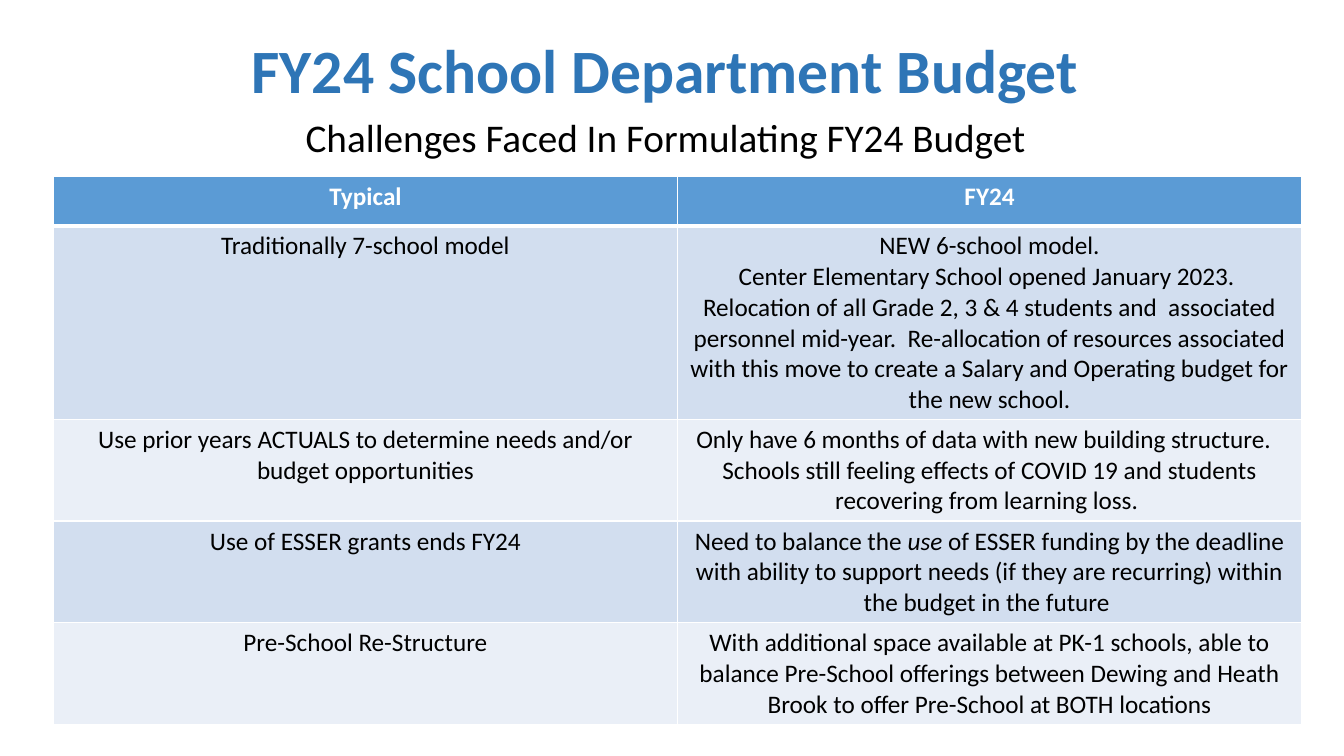
from lxml.etree import SubElement
from pptx import Presentation
from pptx.dml.color import RGBColor
from pptx.enum.text import MSO_ANCHOR, PP_ALIGN
from pptx.oxml.ns import qn
from pptx.util import Inches, Pt

COLORS = {"title": "2E75B6", "text": "000000", "header": "5B9BD5",
          "odd": "D2DEEF", "even": "EAEFF7", "white": "FFFFFF"}

TITLE = {"size": Pt(44), "bold": True}
SUBTITLE = {"size": Pt(28), "bold": False}
HEADER = {"size": Pt(18), "bold": True}
BODY = {"size": Pt(18), "bold": False}

ROWS = [
    (["Typical"], ["FY24"]),
    (["Traditionally 7-school model"],
     ["NEW 6-school model.",
      "Center Elementary School opened January 2023.  Relocation of all Grade 2, 3 & 4 "
      "students and  associated personnel mid-year.  Re-allocation of resources associated "
      "with this move to create a Salary and Operating budget for the new school."]),
    (["Use prior years ACTUALS to determine needs and/or budget opportunities"],
     ["Only have 6 months of data with new building structure.  ",
      "Schools still feeling effects of COVID 19 and students recovering from learning loss. "]),
    (["Use of ESSER grants ends FY24"],
     ["Need to balance the *use* of ESSER funding by the deadline with ability to support "
      "needs (if they are recurring) within the budget in the future "]),
    (["Pre-School Re-Structure"],
     ["With additional space available at PK-1 schools, able to balance Pre-School offerings "
      "between Dewing and Heath Brook to offer Pre-School at BOTH locations"]),
]
ROW_HEIGHTS = [0.49, 1.92, 1.01, 1.01, 1.01]


def write(tf, paragraphs, color, font, **spacing):
    for i, text in enumerate(paragraphs):
        p = tf.add_paragraph() if i else tf.paragraphs[0]
        p.alignment = PP_ALIGN.CENTER
        for name, value in spacing.items():
            setattr(p, name, value)
        for j, part in enumerate(text.split("*")):
            r = p.add_run()
            r.text = part
            for name, value in {"name": "Calibri", **font}.items():
                setattr(r.font, name, value)
            if j % 2:
                r.font.italic = True
            r.font.color.rgb = RGBColor.from_string(COLORS[color])


def add_heading(s, box, text, color, font, anchor, **spacing):
    tf = s.shapes.add_textbox(*map(Inches, box)).text_frame
    tf.word_wrap = True
    tf.vertical_anchor = anchor
    write(tf, [text], color, font, line_spacing=0.9, **spacing)


def set_borders(cell, widths):
    tcPr = cell._tc.get_or_add_tcPr()
    for side, width in widths.items():
        ln = SubElement(tcPr, qn(f"a:ln{side}"), w=str(Pt(width)))
        fill = SubElement(ln, qn("a:solidFill"))
        SubElement(fill, qn("a:srgbClr"), val=COLORS["white"])


def add_comparison(s, box):
    table = s.shapes.add_table(len(ROWS), 2, *map(Inches, box)).table
    for column in table.columns:
        column.width = Inches(box[2] / 2)
    for i, (row, height) in enumerate(zip(ROWS, ROW_HEIGHTS)):
        table.rows[i].height = Inches(height)
        fill = "header" if i == 0 else "odd" if i % 2 else "even"
        for j, paragraphs in enumerate(row):
            cell = table.cell(i, j)
            set_borders(cell, {"L": 1, "R": 1, "T": 3 if i == 1 else 1,
                               "B": 3 if i == 0 else 1})
            cell.fill.solid()
            cell.fill.fore_color.rgb = RGBColor.from_string(COLORS[fill])
            if i == 0:
                write(cell.text_frame, paragraphs, "white", HEADER)
            else:
                write(cell.text_frame, paragraphs, "text", BODY)


def main():
    prs = Presentation()
    prs.slide_width, prs.slide_height = Inches(13.33), Inches(7.5)
    s = prs.slides.add_slide(prs.slide_layouts[6])
    add_heading(s, (0.85, 0, 11.5, 1.45), "FY24 School Department Budget",
                "title", TITLE, MSO_ANCHOR.MIDDLE)
    add_heading(s, (0.53, 1.13, 12.14, 4.76), "Challenges Faced In Formulating FY24 Budget",
                "text", SUBTITLE, MSO_ANCHOR.TOP, space_before=Pt(10))
    add_comparison(s, (0.53, 1.75, 12.38, 5.39))
    prs.save("out.pptx")


if __name__ == "__main__":
    main()
